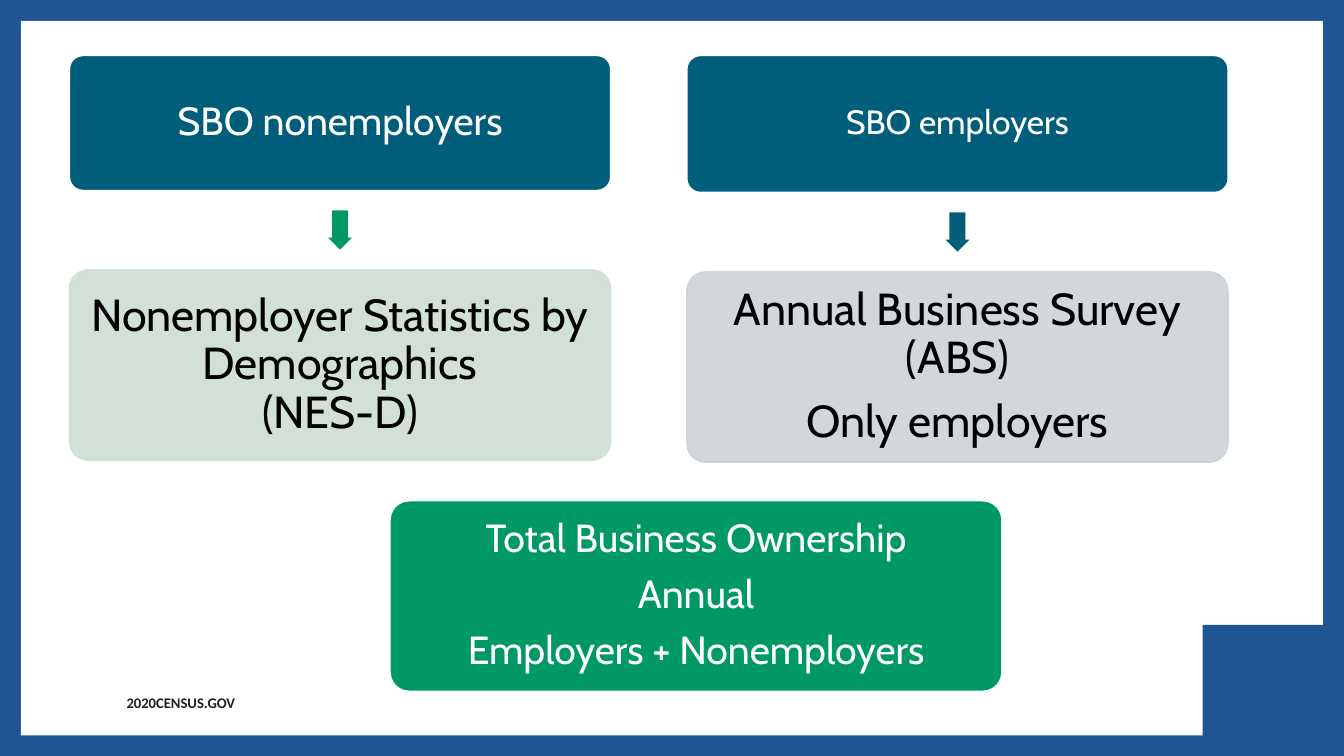
"""Build a slide on how the SBO splits into two programs and one total."""
from lxml import etree
from pptx import Presentation
from pptx import util as u
from pptx.dml.color import RGBColor
from pptx.enum import shapes, text
from pptx.oxml import ns

BLUE = RGBColor(0x20, 0x54, 0x93)
WHITE = RGBColor(0xFF, 0xFF, 0xFF)
BLACK = RGBColor(0, 0, 0)
INK = RGBColor(0x23, 0x1F, 0x20)
TEAL = RGBColor(0x00, 0x5E, 0x7B)
GREEN = RGBColor(0x00, 0x99, 0x64)
MINT = RGBColor(0xCC, 0xDE, 0xD3)
GRAY = RGBColor(0xCC, 0xD3, 0xD7)
KIND = shapes.MSO_SHAPE


def write(frame, lines, size, color, font="Cabin", bold=False,
          align=text.PP_ALIGN.CENTER, lead=0.9, gap=0.35):
    for i, line in enumerate(lines):
        para = frame.paragraphs[0] if i == 0 else frame.add_paragraph()
        para.text = line
        para.alignment = align
        para.line_spacing = lead
        para.space_after = u.Pt(round(gap * size, 1))
        para.font.size = u.Pt(size)
        para.font.name = font
        para.font.bold = bold
        para.font.color.rgb = color


def fade(fill, share):
    tint = fill._xPr.find(ns.qn("a:solidFill"))[0]
    etree.SubElement(tint, ns.qn("a:alpha"), val=str(share * 1000))


class Deck:
    def __init__(self):
        self.prs = Presentation()
        self.prs.slide_width = u.Cm(33.87)
        self.prs.slide_height = u.Cm(19.05)
        self.slide = self.prs.slides.add_slide(self.prs.slide_layouts[6])
        back = self.slide.background.fill
        back.solid()
        back.fore_color.rgb = BLUE

    def shape(self, kind, x, y, w, h, color):
        item = self.slide.shapes.add_shape(kind, *map(u.Cm, (x, y, w, h)))
        item.shadow.inherit = False
        item.fill.solid()
        item.fill.fore_color.rgb = color
        item.line.fill.background()
        return item

    def card(self, x, y, w, h, color, lines, size, ink=WHITE, edge=WHITE,
             share=None, gap=0.35):
        item = self.shape(KIND.ROUNDED_RECTANGLE, x, y, w, h, color)
        item.adjustments[0] = 0.1
        item.line.color.rgb = edge
        item.line.width = u.Pt(1)
        if share:
            fade(item.fill, share)
            fade(item.line.fill, share)
        frame = item.text_frame
        frame.word_wrap = True
        frame.vertical_anchor = text.MSO_ANCHOR.MIDDLE
        frame.margin_left = frame.margin_right = u.Cm(0.1)
        frame.margin_top = frame.margin_bottom = u.Cm(0.1)
        write(frame, lines, size, ink, gap=gap)

    def arrow(self, mid, y, color):
        item = self.shape(KIND.DOWN_ARROW, mid - 0.3, y, 0.6, 0.99, color)
        item.adjustments[0] = 0.667
        item.adjustments[1] = 0.5

    def label(self, x, y, w, h, line, size, color, **style):
        box = self.slide.shapes.add_textbox(*map(u.Cm, (x, y, w, h)))
        box.text_frame.word_wrap = False
        write(box.text_frame, [line], size, color, **style)


def main():
    deck = Deck()
    deck.shape(KIND.RECTANGLE, 0.53, 0.53, 32.81, 18, WHITE)
    deck.label(2.94, 17.37, 3.33, 0.71, "2020CENSUS.GOV", 10.5, INK,
               font="Calibri", bold=True, align=text.PP_ALIGN.LEFT,
               lead=1, gap=0)
    deck.shape(KIND.RECTANGLE, 30.31, 15.75, 3.56, 3.3, BLUE)

    wide = 13.64
    flows = [
        (1.75, 3.4, "SBO nonemployers", 28, GREEN, MINT, 0,
         ["Nonemployer Statistics by Demographics", "(NES-D)"]),
        (17.31, 3.45, "SBO employers", 24, TEAL, GRAY, 0.35,
         ["Annual Business Survey (ABS)", "Only employers"]),
    ]
    for x, high, head, size, tip, pale, gap, lines in flows:
        end = 1.4 + high
        deck.card(x, 1.4, wide, high, TEAL, [head], size)
        deck.arrow(x + wide / 2, end + 0.5, tip)
        deck.card(x, end + 2, wide, 4.8, pale, lines, 32, ink=BLACK,
                  edge=pale, share=90, gap=gap)

    deck.card(9.83, 12.62, 15.42, 4.8, GREEN,
              ["Total Business Ownership", "Annual",
               "Employers + Nonemployers"], 28)
    deck.prs.save("out.pptx")


if __name__ == "__main__":
    main()
